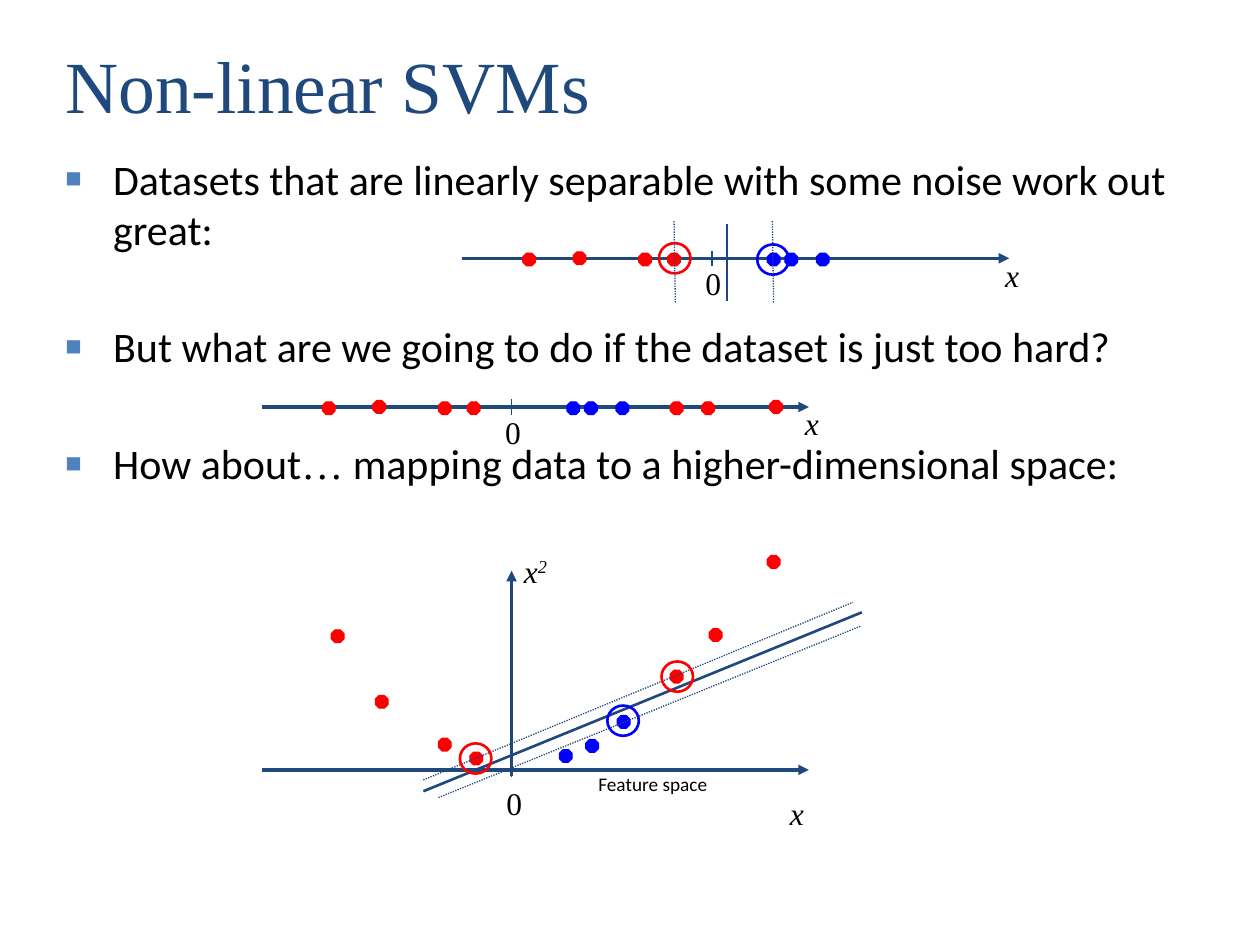
"""Build the slide on non-linear support vector machines."""
from lxml.etree import SubElement
from pptx import Presentation
from pptx.dml.color import RGBColor
from pptx.enum.dml import MSO_LINE
from pptx.enum.shapes import MSO_CONNECTOR, MSO_SHAPE
from pptx.enum.text import MSO_ANCHOR, MSO_AUTO_SIZE
from pptx.oxml.ns import qn
from pptx.util import Cm, Pt

NAVY, BULLET, RED, BLUE, BLACK = "1F497D", "4F81BD", "FF0000", "0000FF", "000000"
SERIF, SANS = "Times New Roman", "Calibri"
DOT, RING_WIDTH, RING_HEIGHT = 0.1, 0.25, 0.24
AXIS_LENGTH, ORIGIN = 4.34, 1.98


def color(hex_string):
    return RGBColor.from_string(hex_string)


def inches(value):
    return Cm(value * 2.54)


class Diagram:
    """Hold the style, the current slide and the group being drawn."""

    def __init__(self, slide):
        self.slide = slide
        self.shapes = slide.shapes

    def start_group(self):
        self.shapes = self.slide.shapes.add_group_shape().shapes

    def end_group(self):
        self.shapes = self.slide.shapes

    def format_run(self, run, size, font, hex_string=BLACK, italic=False):
        run.font.size = Pt(size)
        run.font.name = font
        run.font.italic = italic
        run.font.color.rgb = color(hex_string)

    def text(self, content, left, top, width, height, size=18, font=SERIF,
             hex_string=BLACK, italic=False, wrap=True):
        box = self.shapes.add_textbox(*map(inches, (left, top, width, height)))
        frame = box.text_frame
        frame.word_wrap = wrap
        frame.text = content
        self.format_run(frame.paragraphs[0].runs[0], size, font, hex_string, italic)
        return frame

    def label(self, content, left, top, width=0.5, italic=True):
        frame = self.text(content, left, top, width, 0.4, italic=italic)
        frame.auto_size = MSO_AUTO_SIZE.SHAPE_TO_FIT_TEXT
        return frame

    def superscript(self, paragraph, content):
        run = paragraph.add_run()
        run.text = content
        self.format_run(run, 18, SERIF, italic=True)
        run._r.get_or_add_rPr().set("baseline", "30000")

    def bullets(self, items, left, top, width, height):
        box = self.shapes.add_textbox(*map(inches, (left, top, width, height)))
        frame = box.text_frame
        frame.word_wrap = True
        for index, pieces in enumerate(items):
            paragraph = frame.paragraphs[0] if index == 0 else frame.add_paragraph()
            paragraph.space_before = Pt(38 if index else 0)
            for content, font in pieces:
                run = paragraph.add_run()
                run.text = content
                self.format_run(run, 24, font)
            self.bullet_mark(paragraph)

    def bullet_mark(self, paragraph):
        properties = paragraph._p.get_or_add_pPr()
        properties.set("marL", str(inches(0.38)))
        properties.set("indent", str(-inches(0.38)))
        mark_color = SubElement(properties, qn("a:buClr"))
        SubElement(mark_color, qn("a:srgbClr"), val=BULLET)
        SubElement(properties, qn("a:buSzPct"), val="65000")
        SubElement(properties, qn("a:buFont"), typeface=SERIF)
        SubElement(properties, qn("a:buChar"), char="■")

    def line(self, x1, y1, x2, y2, width=0.75, dotted=False, arrow=False):
        connector = self.shapes.add_connector(
            MSO_CONNECTOR.STRAIGHT, *map(inches, (x1, y1, x2, y2)))
        connector.line.color.rgb = color(NAVY)
        connector.line.width = Pt(width)
        if dotted:
            connector.line.dash_style = MSO_LINE.ROUND_DOT
        if arrow:
            SubElement(connector.line._get_or_add_ln(), qn("a:tailEnd"), type="triangle")
        SubElement(connector._element.spPr, qn("a:effectLst"))

    def dots(self, positions, hex_string):
        for left, top in positions:
            shape = self.shapes.add_shape(
                MSO_SHAPE.OCTAGON, *map(inches, (left, top, DOT, DOT)))
            shape.shadow.inherit = False
            shape.fill.solid()
            shape.fill.fore_color.rgb = color(hex_string)
            shape.line.color.rgb = color(hex_string)
            shape.line.width = Pt(0.75)

    def ring(self, left, top, hex_string):
        shape = self.shapes.add_shape(
            MSO_SHAPE.OVAL, *map(inches, (left, top, RING_WIDTH, RING_HEIGHT)))
        shape.shadow.inherit = False
        shape.fill.background()
        shape.line.color.rgb = color(hex_string)
        shape.line.width = Pt(1.5)

    def axis(self, left, y):
        self.line(left, y, left + AXIS_LENGTH, y, width=2, arrow=True)
        self.line(left + ORIGIN, y - 0.06, left + ORIGIN, y + 0.06)

    def number_line(self, left, y, far_reds=()):
        self.axis(left, y)
        self.label("0", left + 1.83, y, 0.38, italic=False)
        reds = [(0.48, -0.04), (0.88, -0.05), (1.4, -0.04), (1.63, -0.04), *far_reds]
        blues = [(2.42, -0.04), (2.56, -0.04), (2.81, -0.04)]
        for offsets, hex_string in ((reds, RED), (blues, BLUE)):
            self.dots([(left + dx, y + dy) for dx, dy in offsets], hex_string)
        self.label("x", left + 4.21, y - 0.07)


def draw_hard_dataset(diagram):
    diagram.start_group()
    diagram.number_line(2.08, 3.23, [(3.24, -0.04), (3.49, -0.04), (4.03, -0.05)])


def draw_separable_dataset(diagram):
    diagram.start_group()
    diagram.number_line(3.67, 2.05)
    diagram.line(5.77, 1.78, 5.77, 2.39, width=1.5)
    diagram.ring(6.01, 1.94, BLUE)
    diagram.ring(5.23, 1.93, RED)
    for x in (6.13, 5.35):
        diagram.line(x + 0.01, 2.4, x, 1.75, dotted=True)


def draw_feature_space(diagram):
    diagram.start_group()
    diagram.axis(2.08, 6.11)
    diagram.dots([(2.63, 5), (2.98, 5.52), (3.48, 5.86), (3.73, 5.97),
                  (5.32, 5.32), (5.63, 4.99), (6.09, 4.41)], RED)
    diagram.dots([(4.65, 5.87), (4.9, 5.68), (4.44, 5.95)], BLUE)
    diagram.line(4.06, 6.16, 4.06, 4.53, width=2, arrow=True)
    frame = diagram.label("x", 4.06, 4.33)
    diagram.superscript(frame.paragraphs[0], "2")
    diagram.line(3.36, 6.28, 6.84, 4.86, width=1.5)
    diagram.line(3.36, 6.19, 6.77, 4.78, dotted=True)
    diagram.line(3.48, 6.33, 6.83, 4.97, dotted=True)
    for left, top, hex_string in ((5.25, 5.25, RED), (4.82, 5.6, BLUE), (3.65, 5.9, RED)):
        diagram.ring(left, top, hex_string)


def main():
    presentation = Presentation()
    presentation.slide_width, presentation.slide_height = inches(10), inches(7.5)
    diagram = Diagram(presentation.slides.add_slide(presentation.slide_layouts[6]))
    title = diagram.text("Non-linear SVMs", 0.42, 0.25, 5.25, 0.83, 42, hex_string=NAVY)
    title.vertical_anchor = MSO_ANCHOR.MIDDLE
    diagram.bullets([
        [("Datasets that are linearly separable with some noise work out great:", SANS)],
        [("But what are we going to do if the dataset is just too hard?", SANS)],
        [("How about", SANS), ("…", SERIF),
         (" mapping data to a higher-dimensional space:", SANS)],
    ], 0.42, 1.17, 9, 5.5)
    diagram.label("0", 3.92, 6.17, 0.38, italic=False)
    diagram.label("x", 6.17, 6.25)
    draw_hard_dataset(diagram)
    draw_separable_dataset(diagram)
    draw_feature_space(diagram)
    diagram.end_group()
    diagram.text("Feature space", 4.65, 6.08, 1.08, 0.29, 11, SANS, wrap=False)
    presentation.save("out.pptx")


if __name__ == "__main__":
    main()
